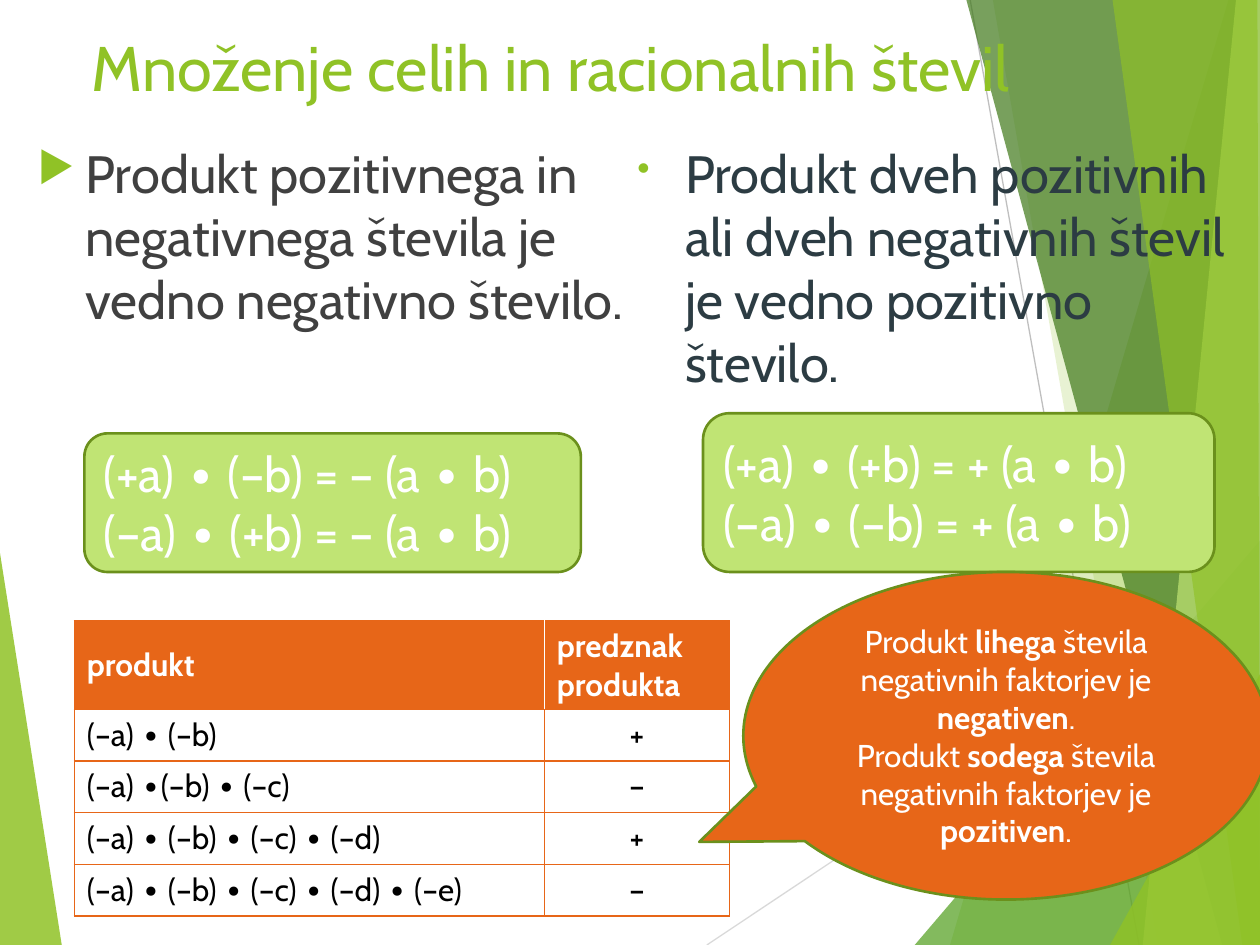
from lxml.etree import SubElement
from pptx import Presentation
from pptx.dml.color import RGBColor
from pptx.enum.shapes import MSO_CONNECTOR, MSO_SHAPE as Shape
from pptx.enum.text import MSO_ANCHOR as Anchor, PP_ALIGN as Align
from pptx.oxml.ns import qn
from pptx.util import Inches, Pt

FONT = "Cabin"
WHITE = RGBColor(0xFF, 0xFF, 0xFF)
BLACK = RGBColor(0, 0, 0)
CHARCOAL = RGBColor(0x40, 0x40, 0x40)
SLATE = RGBColor(0x2C, 0x3C, 0x43)
GREEN = RGBColor(0x90, 0xC2, 0x26)
MID_GREEN = RGBColor(0x54, 0xA0, 0x21)
DARK_GREEN = RGBColor(0x3F, 0x78, 0x19)
LIGHT_GREEN = RGBColor(0xC0, 0xE4, 0x74)
OUTLINE = RGBColor(0x6B, 0x90, 0x1C)
ORANGE = RGBColor(0xE7, 0x66, 0x18)
LIGHT_GRAY = RGBColor(0xD9, 0xD9, 0xD9)
GRAY = RGBColor(0xBF, 0xBF, 0xBF)

LEFT_SHARD = ([(0, 4.39), (0.49, 7.5), (0, 7.5)], GREEN, 85)
RAYS = [
    ((5.61, 7.5), (10, 4.57), LIGHT_GRAY),
    ((7.7, 0), (9.04, 7.5), GRAY),
]
RIGHT_SHARDS = [
    ([(9.75, 0), (7.54, 7.5), (10, 7.5), (10, 0)], GREEN, 30),
    ([(7.88, 0), (9.19, 7.5), (10, 7.5), (10, 0)], GREEN, 20),
    ([(7.26, 7.5), (10, 4.29), (10, 7.5)], MID_GREEN, 72),
    ([(7.67, 0), (9.7, 7.5), (10, 7.5), (10, 0)], DARK_GREEN, 70),
    ([(9.81, 0), (9.07, 7.5), (10, 7.5), (10, 0)], LIGHT_GREEN, 70),
    ([(8.83, 0), (9.86, 7.5), (10, 7.5), (9.98, 0)], GREEN, 65),
    ([(8.81, 7.5), (10, 5.35), (10, 7.5)], GREEN, 80),
]
PRODUCTS = [
    ("produkt", "predznak\nprodukta"),
    ("(–a) ∙ (–b)", "+"),
    ("(–a) ∙(–b) ∙ (–c)", "–"),
    ("(–a) ∙ (–b) ∙ (–c) ∙ (–d)", "+"),
    ("(–a) ∙ (–b) ∙ (–c) ∙ (–d) ∙ (–e)", "–"),
]
SIGN_RULES = [("lihega", "negativen"), ("sodega", "pozitiven")]


def set_font(paragraph, size, color, bold=False):
    font = paragraph.font
    font.name, font.size, font.bold = FONT, Pt(size), bold
    font.color.rgb = color


def add_shard(slide, points, color, opacity):
    corners = [(Inches(x), Inches(y)) for x, y in points]
    builder = slide.shapes.build_freeform(*corners[0])
    builder.add_line_segments(corners[1:], close=True)
    shard = builder.convert_to_shape()
    shard.shadow.inherit = False
    shard.line.fill.background()
    shard.fill.solid()
    shard.fill.fore_color.rgb = color
    tint = shard.fill._xPr.find(".//" + qn("a:srgbClr"))
    SubElement(tint, qn("a:alpha"), val=str(opacity * 1000))


def add_ray(slide, start, end, color):
    ray = slide.shapes.add_connector(
        MSO_CONNECTOR.STRAIGHT, *map(Inches, start + end))
    ray.line.color.rgb = color
    ray.line.width = Pt(0.75)
    SubElement(ray._element.spPr, qn("a:effectLst"))


def add_text(slide, box, text, size, color):
    frame = slide.shapes.add_textbox(*map(Inches, box)).text_frame
    frame.word_wrap = True
    frame.text = text
    set_font(frame.paragraphs[0], size, color)
    return frame.paragraphs[0]


def add_bullet(slide, box, text, color, mark, mark_size, space):
    paragraph = add_text(slide, box, text, 30, color)
    paragraph.space_before = Pt(space)
    props = paragraph._p.get_or_add_pPr()
    props.set("marL", str(Inches(0.38)))
    props.set("indent", str(Inches(-0.38)))
    defaults = props.find(qn("a:defRPr"))
    mark_color = SubElement(props, qn("a:buClr"))
    SubElement(mark_color, qn("a:srgbClr"), val=str(GREEN))
    SubElement(props, qn("a:buSzPct"), val=str(mark_size * 1000))
    SubElement(props, qn("a:buChar"), char=mark)
    props.append(defaults)


def add_panel(slide, kind, box, fill):
    panel = slide.shapes.add_shape(kind, *map(Inches, box))
    panel.shadow.inherit = False
    panel.fill.solid()
    panel.fill.fore_color.rgb = fill
    panel.line.color.rgb = OUTLINE
    panel.line.width = Pt(1.5)
    panel.text_frame.word_wrap = True
    panel.text_frame.vertical_anchor = Anchor.MIDDLE
    return panel


def add_formulas(slide, box, formulas):
    frame = add_panel(slide, Shape.ROUNDED_RECTANGLE, box, LIGHT_GREEN).text_frame
    frame.text = formulas
    for paragraph in frame.paragraphs:
        paragraph.alignment = Align.LEFT
        set_font(paragraph, 28, WHITE)


def add_callout(slide, box):
    callout = add_panel(slide, Shape.OVAL_CALLOUT, box, ORANGE)
    callout.adjustments[0] = -0.584
    callout.adjustments[1] = 0.324
    frame = callout.text_frame
    for index, (parity, sign) in enumerate(SIGN_RULES):
        paragraph = frame.add_paragraph() if index else frame.paragraphs[0]
        paragraph.alignment = Align.CENTER
        set_font(paragraph, 18, WHITE)
        parts = ["Produkt ", parity, " števila negativnih faktorjev je ", sign, "."]
        for part in parts:
            run = paragraph.add_run()
            run.text = part
            run.font.bold = part in (parity, sign)


def set_borders(cell, colors):
    props = cell._tc.get_or_add_tcPr()
    for side, color in zip("LRTB", colors):
        border = SubElement(props, qn(f"a:ln{side}"), w=str(Pt(1)))
        fill = SubElement(border, qn("a:solidFill"))
        SubElement(fill, qn("a:srgbClr"), val=str(color))


def add_product_table(slide, box):
    table = slide.shapes.add_table(len(PRODUCTS), 2, *map(Inches, box)).table
    table.horz_banding = False
    for column, width in zip(table.columns, (3.73, 1.47)):
        column.width = Inches(width)
    for r, texts in enumerate(PRODUCTS):
        header = r == 0
        table.rows[r].height = Inches(0.41)
        for c, text in enumerate(texts):
            cell = table.cell(r, c)
            divider = WHITE if header else ORANGE
            sides = (divider, ORANGE) if c else (ORANGE, divider)
            set_borders(cell, sides + (ORANGE, ORANGE))
            if header:
                cell.fill.solid()
                cell.fill.fore_color.rgb = ORANGE
                cell.vertical_anchor = Anchor.MIDDLE
            else:
                cell.fill.background()
            cell.text = text
            for paragraph in cell.text_frame.paragraphs:
                set_font(paragraph, 18, WHITE if header else BLACK, header)
                if c and not header:
                    paragraph.alignment = Align.CENTER


def main():
    prs = Presentation()
    prs.slide_width, prs.slide_height = Inches(10), Inches(7.5)
    slide = prs.slides.add_slide(prs.slide_layouts[6])
    add_shard(slide, *LEFT_SHARD)
    for ray in RAYS:
        add_ray(slide, *ray)
    for shard in RIGHT_SHARDS:
        add_shard(slide, *shard)
    add_text(slide, (0.63, 0.18, 9.02, 0.9),
             "Množenje celih in racionalnih števil", 36, GREEN)
    add_bullet(slide, (0.2, 1.07, 4.96, 3.54),
               "Produkt pozitivnega in negativnega števila je vedno negativno število.",
               CHARCOAL, "▶", 80, 10)
    add_formulas(slide, (0.67, 3.44, 3.94, 1.1),
                 "(+a) ∙ (–b) = – (a ∙ b)\n(–a) ∙ (+b) = – (a ∙ b)")
    add_formulas(slide, (5.58, 3.28, 4.06, 1.26),
                 "(+a) ∙ (+b) = + (a ∙ b)\n(–a) ∙ (–b) = + (a ∙ b)")
    add_bullet(slide, (4.96, 1.07, 5.04, 3.15),
               "Produkt dveh pozitivnih ali dveh negativnih števil je vedno pozitivno število.",
               SLATE, "•", 70, 6)
    add_product_table(slide, (0.59, 4.93, 5.2, 2.05))
    add_callout(slide, (5.9, 4.54, 4.17, 2.6))
    prs.save("out.pptx")


if __name__ == "__main__":
    main()
